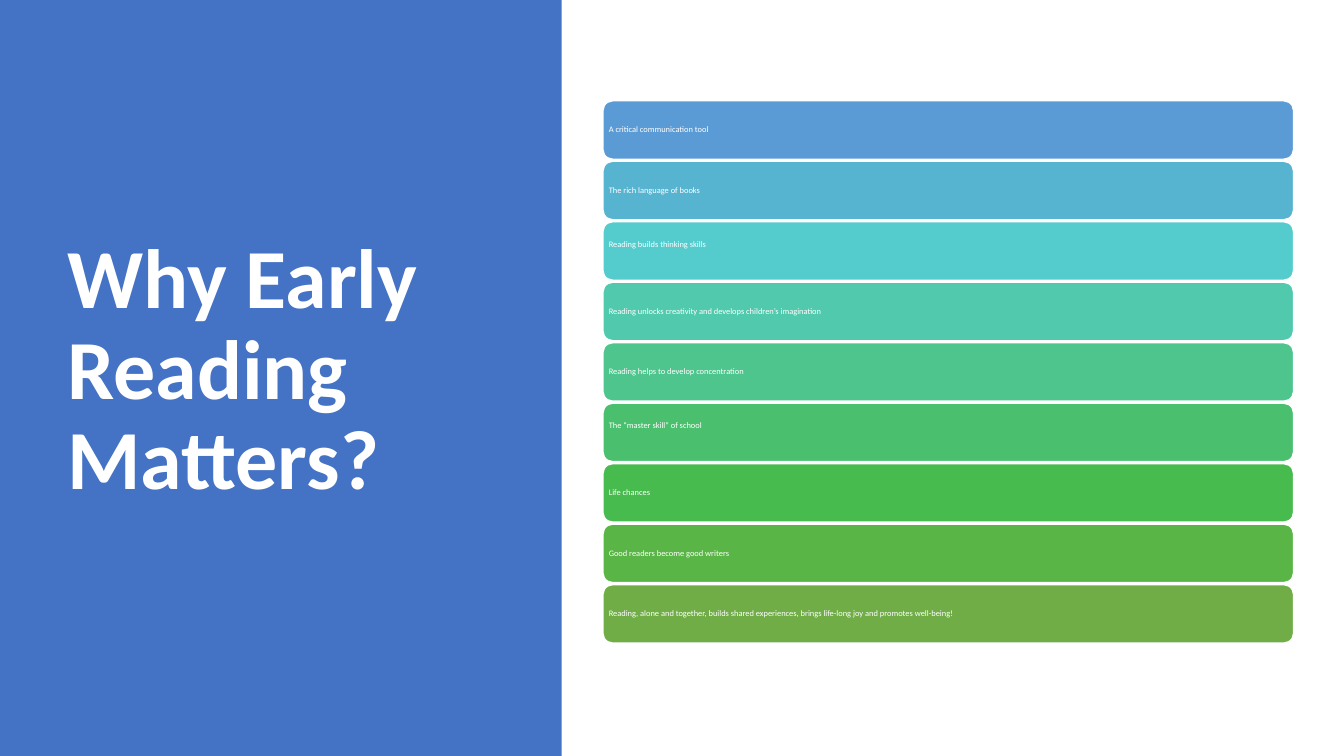
from pptx import Presentation
from pptx.dml.color import RGBColor
from pptx.enum.shapes import MSO_SHAPE
from pptx.enum.text import MSO_ANCHOR, PP_ALIGN
from pptx.util import Inches, Pt

REASONS = [
    ("A critical communication tool", "5B9BD5"),
    ("The rich language of books", "57B4D1"),
    ("Reading builds thinking skills", "54CCCD"),
    ("Reading unlocks creativity and develops children’s imagination", "51C9AD"),
    ("Reading helps to develop concentration", "4DC58D"),
    ("The “master skill” of school", "4AC06E"),
    ("Life chances", "48BB4F"),
    ("Good readers become good writers", "59B546"),
    ("Reading, alone and together, builds shared experiences, "
     "brings life-long joy and promotes well-being!", "70AD47"),
]
RAISED_ROWS = (2, 5)
LIST_LEFT, LIST_TOP, BAR_WIDTH, BAR_HEIGHT, ROW_PITCH = 5.98, 1, 6.85, 0.58, 0.6
BAR_INSET, RAISE = 0.03, 0.13


def color(hex_string):
    return RGBColor.from_string(hex_string)


def write(shape, text, size, bold=False):
    """Fill the shape with one white, left-aligned, vertically centred paragraph."""
    frame = shape.text_frame
    frame.word_wrap = True
    frame.vertical_anchor = MSO_ANCHOR.MIDDLE
    paragraph = frame.paragraphs[0]
    paragraph.text = text
    paragraph.alignment = PP_ALIGN.LEFT
    paragraph.line_spacing = 0.9
    paragraph.font.name = "Calibri"
    paragraph.font.size = Pt(size)
    paragraph.font.bold = bold
    paragraph.font.color.rgb = color("FFFFFF")
    return frame


deck = Presentation()
deck.slide_width, deck.slide_height = Inches(13.33), Inches(7.5)
slide = deck.slides.add_slide(deck.slide_layouts[6])

panel = slide.shapes.add_shape(
    MSO_SHAPE.RECTANGLE, 0, 0, Inches(5.57), deck.slide_height)
panel.shadow.inherit = False
panel.fill.solid()
panel.fill.fore_color.rgb = color("4472C4")
panel.line.fill.background()

title = slide.shapes.add_textbox(
    Inches(0.57), Inches(0.68), Inches(4.16), Inches(6.02))
write(title, "Why Early Reading Matters?", 60, bold=True)

for row, (reason, fill) in enumerate(REASONS):
    bar = slide.shapes.add_shape(
        MSO_SHAPE.ROUNDED_RECTANGLE,
        Inches(LIST_LEFT), Inches(LIST_TOP + row * ROW_PITCH),
        Inches(BAR_WIDTH), Inches(BAR_HEIGHT))
    bar.shadow.inherit = False
    bar.fill.solid()
    bar.fill.fore_color.rgb = color(fill)
    bar.line.color.rgb = color("FFFFFF")
    bar.line.width = Pt(1)
    frame = write(bar, reason, 6)
    frame.margin_left = frame.margin_right = frame.margin_top = Inches(BAR_INSET)
    frame.margin_bottom = Inches(BAR_INSET + (RAISE if row in RAISED_ROWS else 0))

deck.save("out.pptx")
